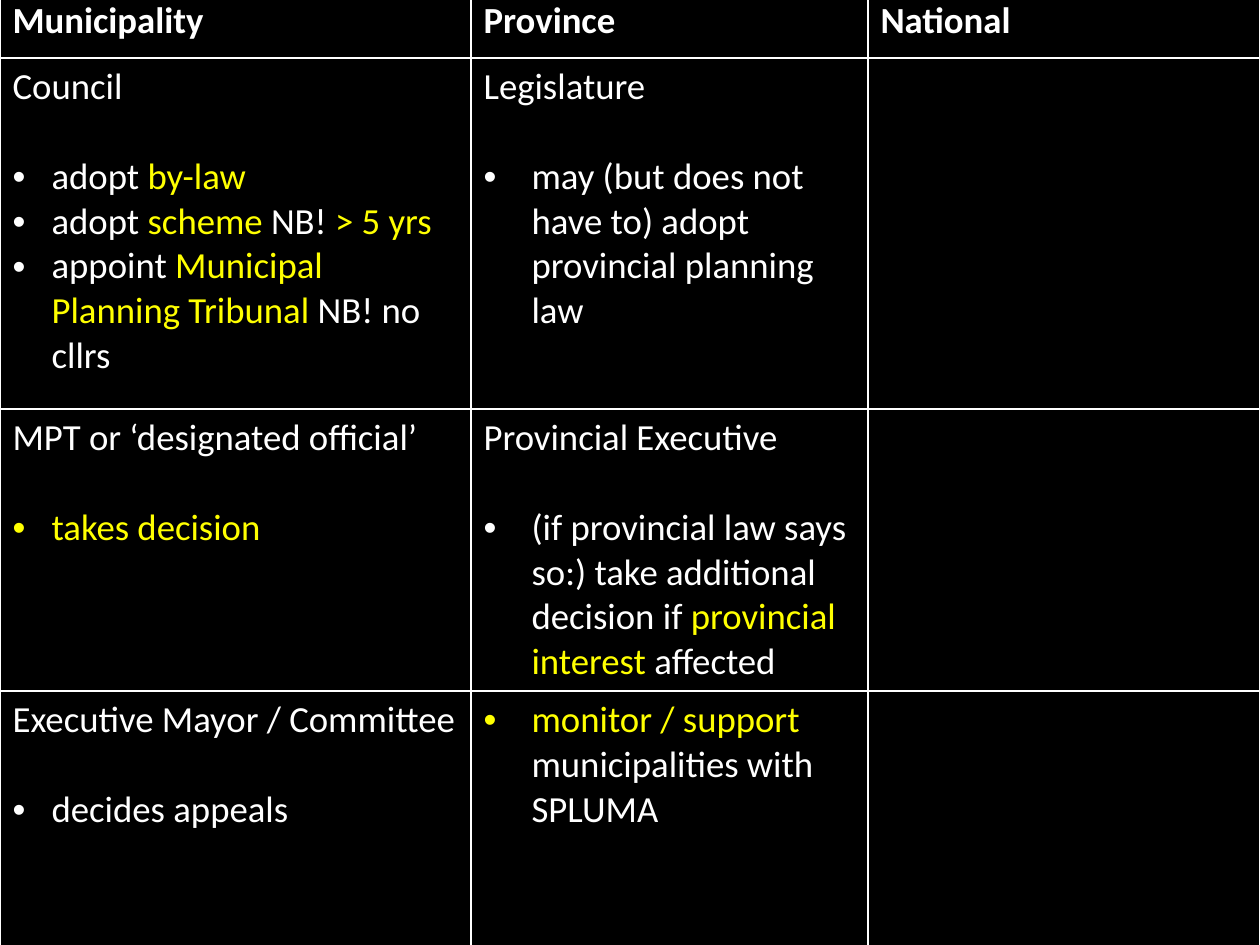
from lxml import etree
from pptx import Presentation
from pptx.dml.color import RGBColor
from pptx.oxml.ns import qn
from pptx.util import Pt

PX = 914400 // 126
BLACK = RGBColor(0x00, 0x00, 0x00)
WHITE = RGBColor(0xFF, 0xFF, 0xFF)
YELLOW = RGBColor(0xFF, 0xFF, 0x00)
FONT = "Calibri"
TEXT_SIZE = Pt(21)
HEADING_GAP = Pt(25.6)
BORDER_WIDTH = Pt(1)
BLANK_LAYOUT = 6

TABLE_TOP = -8
COLUMN_WIDTHS = [471, 397, 392]
ROW_HEIGHTS = [66, 351, 270, 258]
BULLET_INDENTS = [39, 48, 48]

HEADERS = ["Municipality", "Province", "National"]
# Each cell is (heading, bullets); text between asterisks is highlighted.
DUTIES = [
    [
        ("Council", [
            "adopt *by-law*",
            "adopt *scheme* NB! *> 5 yrs*",
            "appoint *Municipal Planning Tribunal *NB! no cllrs",
        ]),
        ("Legislature", [
            "may (but does not have to) adopt provincial planning law",
        ]),
    ],
    [
        ("MPT or ‘designated official’", ["*takes decision*"]),
        ("Provincial Executive", [
            "(if provincial law says so:) take additional decision if "
            "*provincial interest* affected",
        ]),
    ],
    [
        ("Executive Mayor / Committee", ["decides appeals"]),
        (None, ["*monitor / support *municipalities with SPLUMA"]),
    ],
]


def add_text(paragraph, text, bold=False):
    """Add runs, switching to the highlight colour at each asterisk."""
    for position, part in enumerate(text.split("*")):
        if not part:
            continue
        run = paragraph.add_run()
        run.text = part
        font_format = {"name": FONT, "size": TEXT_SIZE, "bold": bold}
        for attribute, value in font_format.items():
            setattr(run.font, attribute, value)
        run.font.color.rgb = YELLOW if position % 2 else WHITE


def add_bullet(paragraph, indent):
    properties = paragraph._p.get_or_add_pPr()
    properties.set("marL", str(indent * PX))
    properties.set("indent", str(-indent * PX))
    etree.SubElement(properties, qn("a:buFont"), typeface="Arial")
    etree.SubElement(properties, qn("a:buChar"), char="•")


def format_cell(cell):
    """Give the cell white borders and a black fill."""
    properties = cell._tc.get_or_add_tcPr()
    for side in ("a:lnL", "a:lnR", "a:lnT", "a:lnB"):
        line = etree.SubElement(properties, qn(side), w=str(BORDER_WIDTH))
        line_fill = etree.SubElement(line, qn("a:solidFill"))
        etree.SubElement(line_fill, qn("a:srgbClr"), val=str(WHITE))
    cell.fill.solid()
    cell.fill.fore_color.rgb = BLACK


def fill_duties(cell, heading, bullets, indent):
    frame = cell.text_frame
    if heading:
        add_text(frame.paragraphs[0], heading)
    for number, bullet in enumerate(bullets):
        is_first = number == 0
        if is_first and not heading:
            paragraph = frame.paragraphs[0]
        else:
            paragraph = frame.add_paragraph()
        if is_first and heading:
            paragraph.space_before = HEADING_GAP
        add_bullet(paragraph, indent)
        add_text(paragraph, bullet)


def add_duties_table(slide):
    table = slide.shapes.add_table(
        len(ROW_HEIGHTS), len(COLUMN_WIDTHS), 0, TABLE_TOP * PX,
        sum(COLUMN_WIDTHS) * PX, sum(ROW_HEIGHTS) * PX).table
    table.first_row = False
    table.horz_banding = False
    for column, width in zip(table.columns, COLUMN_WIDTHS):
        column.width = width * PX
    for row, height in zip(table.rows, ROW_HEIGHTS):
        row.height = height * PX
    for cell in table.iter_cells():
        format_cell(cell)

    for column, header in enumerate(HEADERS):
        add_text(table.cell(0, column).text_frame.paragraphs[0], header, bold=True)
    for row, duties in enumerate(DUTIES, start=1):
        for column, (heading, bullets) in enumerate(duties):
            fill_duties(table.cell(row, column), heading, bullets,
                        BULLET_INDENTS[column])


def main():
    presentation = Presentation()
    presentation.slide_width = 1260 * PX
    presentation.slide_height = 945 * PX
    slide = presentation.slides.add_slide(presentation.slide_layouts[BLANK_LAYOUT])
    slide.background.fill.solid()
    slide.background.fill.fore_color.rgb = BLACK
    add_duties_table(slide)
    presentation.save("out.pptx")


if __name__ == "__main__":
    main()
